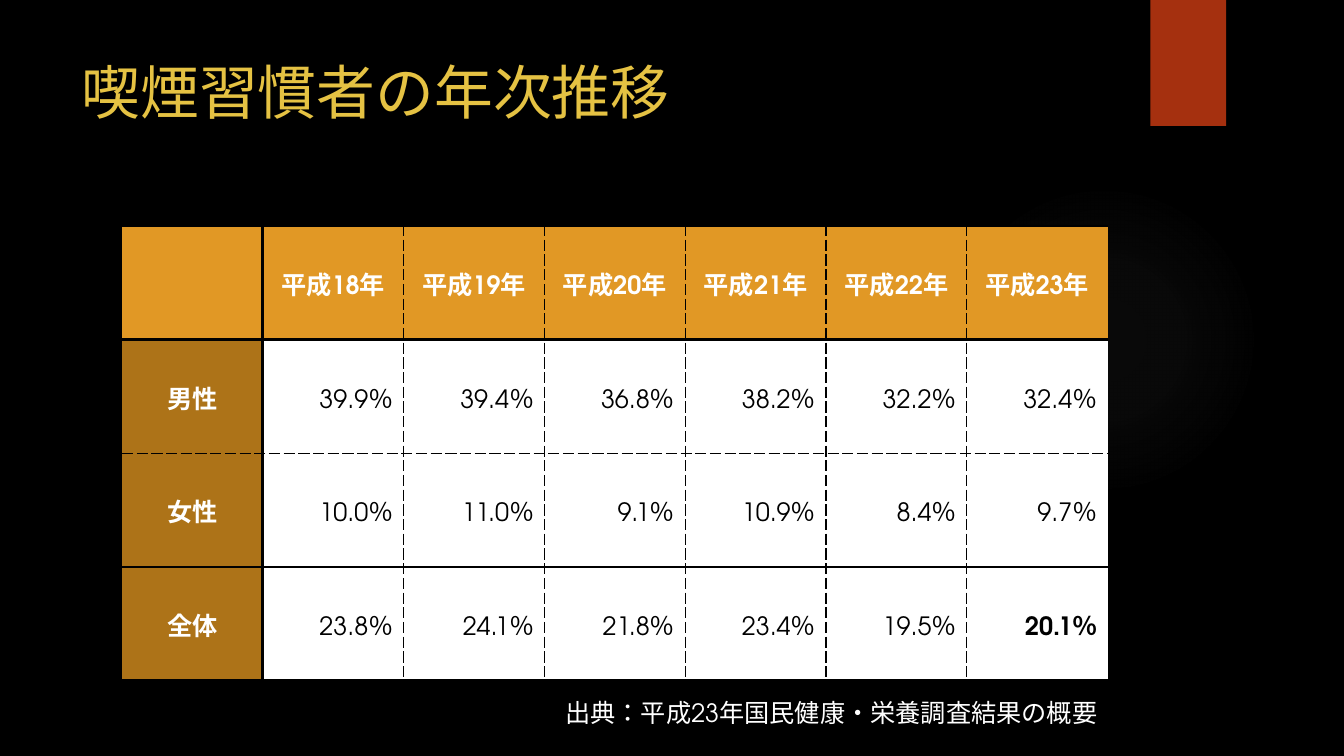
"""Build the slide on yearly smoking rates in Japan."""
from typing import NamedTuple

from lxml.etree import SubElement
from pptx import Presentation
from pptx.dml.color import RGBColor
from pptx.enum.lang import MSO_LANGUAGE_ID as Language
from pptx.enum.shapes import MSO_SHAPE as Preset
from pptx.enum.text import MSO_ANCHOR as Anchor, PP_ALIGN as Align
from pptx.oxml import parse_xml
from pptx.oxml.ns import nsdecls, qn
from pptx.util import Pt

BLACK = RGBColor(0x00, 0x00, 0x00)
WHITE = RGBColor(0xFF, 0xFF, 0xFF)
GLOW_GREY = RGBColor(0x84, 0x84, 0x84)
RUST = RGBColor(0xA5, 0x30, 0x0F)
GOLD = RGBColor(0xE5, 0xC2, 0x43)
AMBER = RGBColor(0xE1, 0x98, 0x25)
BROWN = RGBColor(0xAD, 0x73, 0x18)
FONT = "TeX Gyre Adventor"


class Box(NamedTuple):
    left: float
    top: float
    width: float
    height: float

    def lengths(self) -> tuple:
        return tuple(Pt(value) for value in self)


class Caption(NamedTuple):
    text: str
    box: Box
    size: float
    color: RGBColor


class SmokingRates(NamedTuple):
    group: str
    rates: tuple


GLOW_BOX = Box(677.5, 131.75, 221.75, 221.75)
RIBBON_BOX = Box(821.8, 0, 54, 90)
TABLE_BOX = Box(87.1, 161.6, 704.2, 324.7)
CAPTIONS = (
    Caption("喫煙習慣者の年次推移", Box(51.1, 36, 740.9, 110.2), 42, GOLD),
    Caption("出典：平成23年国民健康・栄養調査結果の概要",
            Box(396.7, 494.6, 412, 29), 18, WHITE),
)
YEARS = range(18, 24)
GROUPS = (
    SmokingRates("男性", (39.9, 39.4, 36.8, 38.2, 32.2, 32.4)),
    SmokingRates("女性", (10.0, 11.0, 9.1, 10.9, 8.4, 9.7)),
    SmokingRates("全体", (23.8, 24.1, 21.8, 23.4, 19.5, 20.1)),
)
ROW_RULES = (2, 2.25, 1, 2.25, 2)
COLUMN_RULES = (0, 2.25, 1, 1, 1, 1, 1, 0)
DASHED_WIDTH = 1
CELL_TOP_MARGIN = 10


def write(frame, text: str, *, size: float = 18, color: RGBColor = WHITE,
          bold: bool = False, align: Align = Align.LEFT) -> None:
    paragraph = frame.paragraphs[0]
    paragraph.alignment = align
    run = paragraph.add_run()
    run.text = text
    run.font.name = FONT
    run.font.size = Pt(size)
    run.font.bold = bold
    run.font.color.rgb = color
    run.font.language_id = Language.JAPANESE
    SubElement(run.font._element, qn("a:ea"), typeface=FONT)


def draw_caption(slide, caption: Caption) -> None:
    frame = slide.shapes.add_textbox(*caption.box.lengths()).text_frame
    frame.word_wrap = True
    write(frame, caption.text, size=caption.size, color=caption.color)


def draw_plain(slide, preset: Preset, box: Box, color: RGBColor):
    shape = slide.shapes.add_shape(preset, *box.lengths())
    shape.shadow.inherit = False
    shape.fill.solid()
    shape.fill.fore_color.rgb = color
    shape.line.fill.background()
    return shape


def draw_glow(slide) -> None:
    glow = draw_plain(slide, Preset.OVAL, GLOW_BOX, GLOW_GREY)
    stops = "".join(
        f'<a:gs pos="{place * 1000}"><a:srgbClr val="{GLOW_GREY}">'
        f'<a:alpha val="{alpha * 1000}"/></a:srgbClr></a:gs>'
        for place, alpha in ((0, 7), (36, 6), (69, 0), (100, 0)))
    gradient = parse_xml(
        f'<a:gradFill {nsdecls("a")}><a:gsLst>{stops}</a:gsLst>'
        '<a:path path="circle"><a:fillToRect l="50000" t="50000" '
        'r="50000" b="50000"/></a:path></a:gradFill>')
    properties = glow._element.spPr
    properties.replace(properties.find(qn("a:solidFill")), gradient)


def border(side: str, width: float):
    if not width:
        return parse_xml(f'<a:{side} {nsdecls("a")} w="0"><a:noFill/></a:{side}>')
    dash = "dash" if width == DASHED_WIDTH else "solid"
    return parse_xml(
        f'<a:{side} {nsdecls("a")} w="{Pt(width)}"><a:solidFill>'
        f'<a:srgbClr val="{BLACK}"/></a:solidFill>'
        f'<a:prstDash val="{dash}"/></a:{side}>')


def style_cell(cell, row: int, column: int, fill: RGBColor) -> None:
    cell.vertical_anchor = Anchor.MIDDLE
    cell.margin_top = Pt(CELL_TOP_MARGIN)
    cell.fill.solid()
    cell.fill.fore_color.rgb = fill
    widths = {"lnL": COLUMN_RULES[column], "lnR": COLUMN_RULES[column + 1],
              "lnT": ROW_RULES[row], "lnB": ROW_RULES[row + 1]}
    properties = cell._tc.get_or_add_tcPr()
    for position, (side, width) in enumerate(widths.items()):
        properties.insert(position, border(side, width))


def draw_rates(slide) -> None:
    header = ["", *(f"平成{year}年" for year in YEARS)]
    body = [[entry.group, *(f"{rate:.1f}％" for rate in entry.rates)]
            for entry in GROUPS]
    rows = [header, *body]
    table = slide.shapes.add_table(
        len(rows), len(header), *TABLE_BOX.lengths()).table
    table.horz_banding = False
    for row, texts in enumerate(rows):
        for column, text in enumerate(texts):
            cell = table.cell(row, column)
            heading = row == 0 or column == 0
            latest_total = (row, column) == (len(GROUPS), len(YEARS))
            fill = AMBER if row == 0 else BROWN if column == 0 else WHITE
            style_cell(cell, row, column, fill)
            if text:
                write(cell.text_frame, text, bold=heading or latest_total,
                      color=WHITE if heading else BLACK,
                      align=Align.CENTER if heading else Align.RIGHT)


def main() -> None:
    deck = Presentation()
    deck.slide_width, deck.slide_height = Pt(960), Pt(540)
    slide = deck.slides.add_slide(deck.slide_layouts[6])
    slide.background.fill.solid()
    slide.background.fill.fore_color.rgb = BLACK
    draw_glow(slide)
    draw_plain(slide, Preset.RECTANGLE, RIBBON_BOX, RUST)
    draw_rates(slide)
    for caption in CAPTIONS:
        draw_caption(slide, caption)
    deck.save("out.pptx")


if __name__ == "__main__":
    main()
